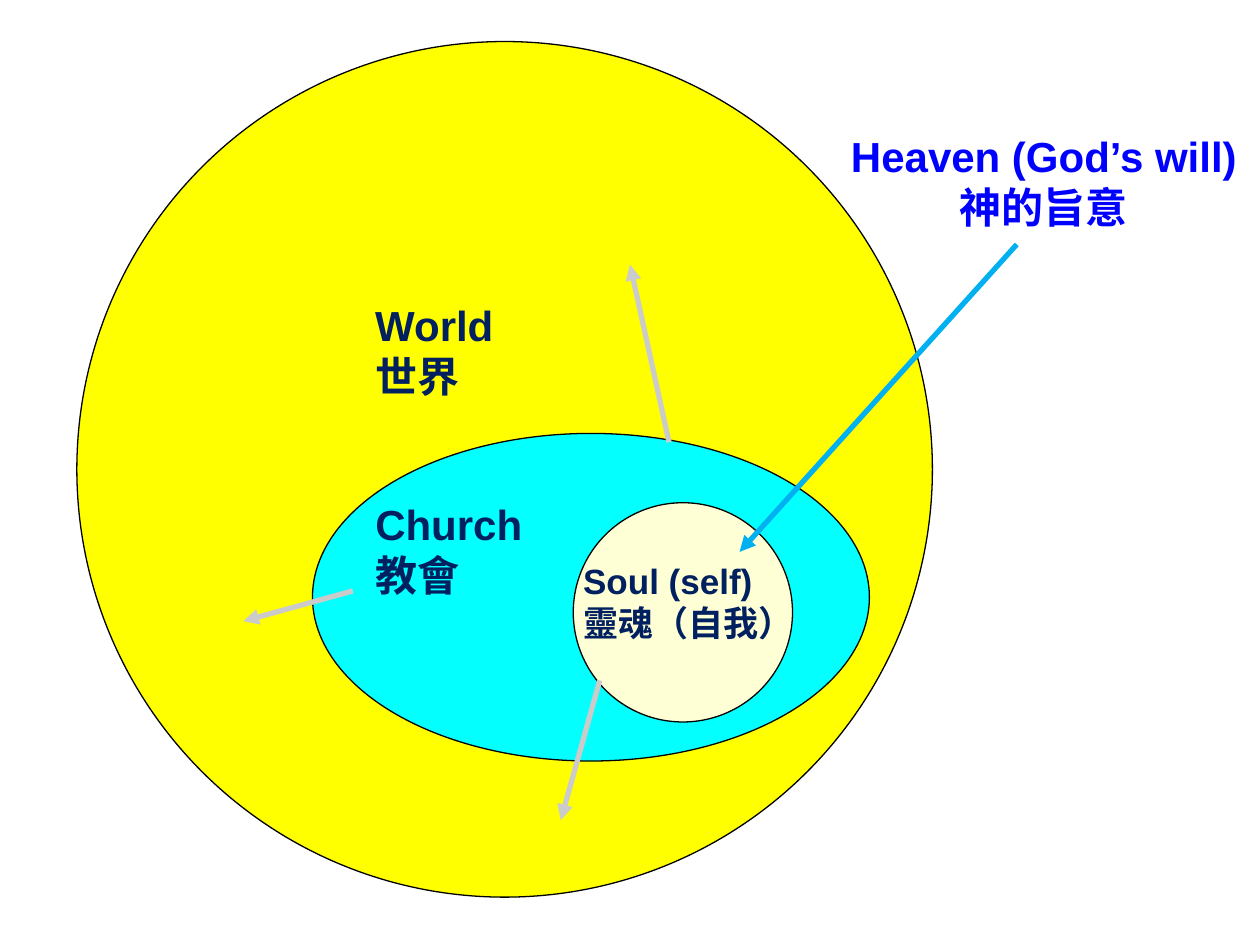
from lxml import etree
from pptx import Presentation
from pptx.dml.color import RGBColor
from pptx.enum.shapes import MSO_CONNECTOR, MSO_SHAPE
from pptx.enum.text import MSO_AUTO_SIZE, PP_ALIGN
from pptx.oxml.ns import qn
from pptx.util import Inches, Pt

OVAL = MSO_SHAPE.OVAL
STRAIGHT = MSO_CONNECTOR.STRAIGHT
LEFT, CENTER = PP_ALIGN.LEFT, PP_ALIGN.CENTER
FIT_SHAPE = MSO_AUTO_SIZE.SHAPE_TO_FIT_TEXT

FONT = "Arial"
BLANK_LAYOUT = 6
COLORS = {
    "world": "FFFF00",
    "church": "04FFFF",
    "soul": "FFFFD6",
    "outline": "000000",
    "label": "002060",
    "heaven": "0000FF",
    "descent": "00B0F0",
    "outreach": "CBCBCB",
}

# colour, (left, top, width, height)
REALMS = [
    ("world", (0.61, 0.33, 6.79, 6.79)),
    ("church", (2.48, 3.44, 4.42, 2.6)),
    ("soul", (4.55, 3.99, 1.74, 1.74)),
]
# lines, (left, top, width, height), size, colour, alignment
LABELS = [
    (("World", "世界"), (2.88, 2.33, 1.34, 0.91), 24, "label", LEFT),
    (("Church", "教會"), (2.88, 3.91, 2.65, 0.91), 24, "label", LEFT),
    (("Soul (self)", "靈魂（自我）"), (4.53, 4.39, 2.13, 0.77), 20, "label", LEFT),
    (("Heaven (God’s will)", "神的旨意"), (6.57, 0.99, 3.43, 0.91), 24, "heaven", CENTER),
]
# start, end, colour
ARROWS = [
    ((8.07, 1.94), (5.87, 4.38), "descent"),
    ((5.31, 3.51), (5, 2.1), "outreach"),
    ((4.76, 5.4), (4.45, 6.51), "outreach"),
    ((2.8, 4.69), (1.93, 4.93), "outreach"),
]


def color(name):
    return RGBColor.from_string(COLORS[name])


def add_realm(slide, fill, box):
    shape = slide.shapes.add_shape(OVAL, *map(Inches, box))
    shape.shadow.inherit = False
    shape.fill.solid()
    shape.fill.fore_color.rgb = color(fill)
    shape.line.color.rgb = color("outline")
    shape.line.width = Pt(0.75)


def add_label(slide, lines, box, size, text_color, alignment):
    text_frame = slide.shapes.add_textbox(*map(Inches, box)).text_frame
    text_frame.word_wrap = True
    text_frame.auto_size = FIT_SHAPE
    for index, line in enumerate(lines):
        paragraph = text_frame.add_paragraph() if index else text_frame.paragraphs[0]
        paragraph.alignment = alignment
        run = paragraph.add_run()
        run.text = line
        run.font.name = FONT
        run.font.size = Pt(size)
        run.font.bold = True
        run.font.color.rgb = color(text_color)


def add_arrow(slide, start, end, line_color):
    connector = slide.shapes.add_connector(STRAIGHT, *map(Inches, start + end))
    connector.line.color.rgb = color(line_color)
    connector.line.width = Pt(3)
    etree.SubElement(connector.line._get_or_add_ln(), qn("a:tailEnd"), type="triangle")
    etree.SubElement(connector._element.spPr, qn("a:effectLst"))


def main():
    presentation = Presentation()
    presentation.slide_width = Inches(10)
    presentation.slide_height = Inches(7.5)
    slide = presentation.slides.add_slide(presentation.slide_layouts[BLANK_LAYOUT])
    for realm in REALMS:
        add_realm(slide, *realm)
    for label in LABELS:
        add_label(slide, *label)
    for arrow in ARROWS:
        add_arrow(slide, *arrow)
    presentation.save("out.pptx")


if __name__ == "__main__":
    main()
